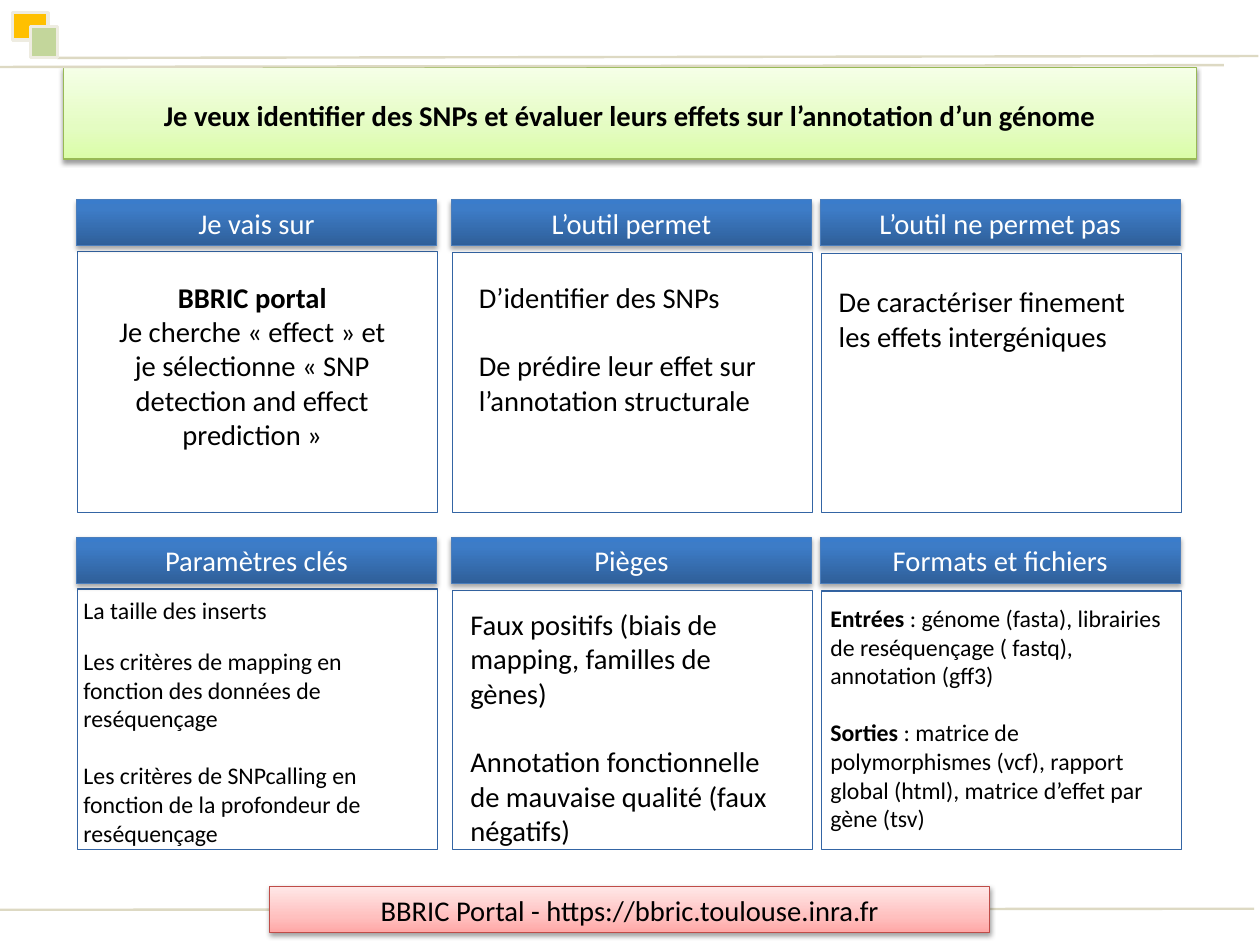
from copy import deepcopy

from lxml import etree
from pptx import Presentation
from pptx import util as u
from pptx.dml.color import RGBColor
from pptx.enum import shapes, text
from pptx.oxml.ns import qn

FONT = "Calibri"
BLACK = RGBColor(0, 0, 0)
WHITE = RGBColor(255, 255, 255)
RULE_BEIGE = RGBColor(0xDD, 0xD9, 0xC3)
SQUARE_EDGE = RGBColor(0xEE, 0xEC, 0xE1)
AMBER = RGBColor(0xFF, 0xC0, 0x00)
SAGE = RGBColor(0xC3, 0xD6, 0x9B)
FRAME_BLUE = RGBColor(0x34, 0x65, 0xA4)
HEADER_EDGE = RGBColor(0x4B, 0x7E, 0xBC)
TITLE_EDGE = RGBColor(0x98, 0xB9, 0x55)
PORTAL_EDGE = RGBColor(0xBF, 0x4C, 0x48)
HEADER_STOPS = [(0, RGBColor(0x2F, 0x5F, 0x99)), (0.8, RGBColor(0x3D, 0x7C, 0xC7)), (1, RGBColor(0x3A, 0x7C, 0xCB))]
TITLE_STOPS = [(0, RGBColor(0xDA, 0xFD, 0xA7)), (0.35, RGBColor(0xE4, 0xFC, 0xC2)), (1, RGBColor(0xF5, 0xFF, 0xE7))]
PORTAL_STOPS = [(0, RGBColor(0xFF, 0xA6, 0xA5)), (0.35, RGBColor(0xFF, 0xC0, 0xBF)), (1, RGBColor(0xFF, 0xE7, 0xE7))]

LEFT = text.PP_ALIGN.LEFT
CENTER = text.PP_ALIGN.CENTER
SLIDE_WIDTH, SLIDE_HEIGHT = 793.75, 595.25
COLUMNS = [(48.2, 32.5), (284.4, 33.4), (516.7, 33.8)]
ROWS = [125.9, 338.5]
CARD_WIDTH, CARD_HEIGHT, HEADER_HEIGHT = 226.8, 196.7, 29

CARDS = [
    ("Je vais sur", (14.2, 46.8, 193, 116.6), 18, CENTER, [0], [
        [("BBRIC portal", True)],
        [("Je cherche « effect » et je sélectionne « SNP detection and effect prediction »", False)],
    ]),
    ("L’outil permet", (10.2, 46.8, 215.3, 94.3), 18, LEFT, [21.6], [
        [("D’identifier des SNPs", False)],
        [("De prédire leur effet sur l’annotation structurale", False)],
    ]),
    ("L’outil ne permet pas", (4.6, 49.7, 215.3, 51), 18, LEFT, [], [
        [("De caractériser finement les effets intergéniques", False)],
    ]),
    ("Paramètres clés", (-2.7, 33.1, 226.8, 170.6), 15, LEFT, [14.4, 17.9], [
        [("La taille des inserts", False)],
        [("Les critères de mapping en fonction des données de reséquençage", False)],
        [("Les critères de SNPcalling en fonction de la profondeur de reséquençage", False)],
    ]),
    ("Pièges", (4.8, 40.4, 209.5, 160), 18, LEFT, [21.6], [
        [("Faux positifs (biais de mapping, familles de gènes)", False)],
        [("Annotation fonctionnelle de mauvaise qualité (faux négatifs)", False)],
    ]),
    ("Formats et fichiers", (-0.7, 38.3, 226.8, 157), 15, LEFT, [18], [
        [("Entrées", True), (" : génome (fasta), librairies de reséquençage ( fastq), annotation (gff3)", False)],
        [("Sorties", True), (" : matrice de polymorphismes (vcf), rapport global (html), matrice d’effet par gène (tsv)", False)],
    ]),
]


def points(box):
    return [u.Pt(length) for length in box]


def write(shape, paragraphs, size=18, color=BLACK, align=CENTER, gaps=(), anchor=text.MSO_ANCHOR.TOP):
    frame = shape.text_frame
    frame.word_wrap = True
    frame.auto_size = text.MSO_AUTO_SIZE.NONE
    frame.vertical_anchor = anchor
    for index, runs in enumerate(paragraphs):
        paragraph = frame.add_paragraph() if index else frame.paragraphs[0]
        paragraph.alignment = align
        if index:
            paragraph.space_before = u.Pt(gaps[index - 1])
        for words, bold in runs:
            run = paragraph.add_run()
            run.text = words
            run.font.name = FONT
            run.font.size = u.Pt(size)
            run.font.bold = bold
            run.font.color.rgb = color


def add_rectangle(slide, box, edge, width=0.75, fill=None):
    shape = slide.shapes.add_shape(shapes.MSO_SHAPE.RECTANGLE, *points(box))
    shape.shadow.inherit = False
    shape.line.color.rgb = edge
    shape.line.width = u.Pt(width)
    if fill is None:
        shape.fill.background()
    else:
        shape.fill.solid()
        shape.fill.fore_color.rgb = fill
    return shape


def style_banner(shape, stops, edge, opacity):
    shape.fill.gradient()
    shape.fill.gradient_angle = 90
    properties = shape._element.spPr
    stop_list = properties.find(qn("a:gradFill")).find(qn("a:gsLst"))
    stop_list.insert(1, deepcopy(stop_list[0]))
    for stop, (position, color) in zip(shape.fill.gradient_stops, stops):
        stop.position = position
        stop.color.rgb = color
    shape.line.color.rgb = edge
    shape.line.width = u.Pt(0.75)
    shape.shadow.inherit = False
    effects = properties.find(qn("a:effectLst"))
    shadow = etree.SubElement(effects, qn("a:outerShdw"), blurRad=str(u.Pt(3.1)),
                              dist=str(u.Pt(1.7)), dir="5400000", rotWithShape="0")
    black = etree.SubElement(shadow, qn("a:srgbClr"), val="000000")
    etree.SubElement(black, qn("a:alpha"), val=str(opacity * 1000))


def add_rule(slide, start, end):
    rule = slide.shapes.add_connector(shapes.MSO_CONNECTOR.STRAIGHT, *points(start + end))
    rule.line.color.rgb = RULE_BEIGE
    rule.line.width = u.Pt(1.5)
    etree.SubElement(rule._element.spPr, qn("a:effectLst"))


def add_decoration(slide, box):
    left, top, width, height = box
    for x1, y1, x2, y2 in [(36, 36.5, 792.7, 35.3), (-0.7, 42.2, 771, 41), (-0.7, 573.1, 790, 572.4)]:
        add_rule(slide, (left + x1, top + y1), (left + x2, top + y2))
    add_rectangle(slide, (left + 8, top + 8, 22.3, 17.2), SQUARE_EDGE, 2, AMBER)
    add_rectangle(slide, (left + 19, top + 16.5, 17.2, 20), SQUARE_EDGE, 2, SAGE)


def add_title(slide, box):
    title = slide.shapes.title
    title.left, title.top, title.width, title.height = points(box)
    style_banner(title, TITLE_STOPS, TITLE_EDGE, 38)
    write(title, [[("Je veux identifier des SNPs et évaluer leurs effets sur l’annotation d’un génome", True)]],
          anchor=text.MSO_ANCHOR.MIDDLE)
    frame = title.text_frame
    frame.margin_left = frame.margin_right = frame.margin_bottom = 0
    frame.margin_top = u.Pt(2)


def add_card(slide, box, frame_drop, heading, body_box, size, align, gaps, paragraphs):
    left, top, width, height = box
    add_rectangle(slide, (left + 0.7, top + frame_drop, width, height - frame_drop), FRAME_BLUE)
    header = add_rectangle(slide, (left, top, width, HEADER_HEIGHT), HEADER_EDGE)
    style_banner(header, HEADER_STOPS, HEADER_EDGE, 35)
    write(header, [[(heading, False)]], color=WHITE)
    dx, dy, body_width, body_height = body_box
    body = slide.shapes.add_textbox(*points((left + dx, top + dy, body_width, body_height)))
    write(body, paragraphs, size, align=align, gaps=gaps)


def add_portal(slide, box):
    banner = add_rectangle(slide, box, PORTAL_EDGE)
    style_banner(banner, PORTAL_STOPS, PORTAL_EDGE, 38)
    write(banner, [[("BBRIC Portal - https://bbric.toulouse.inra.fr", False)]])


def main():
    presentation = Presentation()
    presentation.slide_width = u.Pt(SLIDE_WIDTH)
    presentation.slide_height = u.Pt(SLIDE_HEIGHT)
    slide = presentation.slides.add_slide(presentation.slide_layouts[5])
    add_decoration(slide, (0, 0, SLIDE_WIDTH, SLIDE_HEIGHT))
    add_title(slide, (39.8, 42.6, 714, 57.6))
    for index, card in enumerate(CARDS):
        row, column = divmod(index, len(COLUMNS))
        left, frame_drop = COLUMNS[column]
        add_card(slide, (left, ROWS[row], CARD_WIDTH, CARD_HEIGHT), frame_drop, *card)
    add_portal(slide, (170, 558.6, 453.6, 29))
    presentation.save("out.pptx")


if __name__ == "__main__":
    main()
